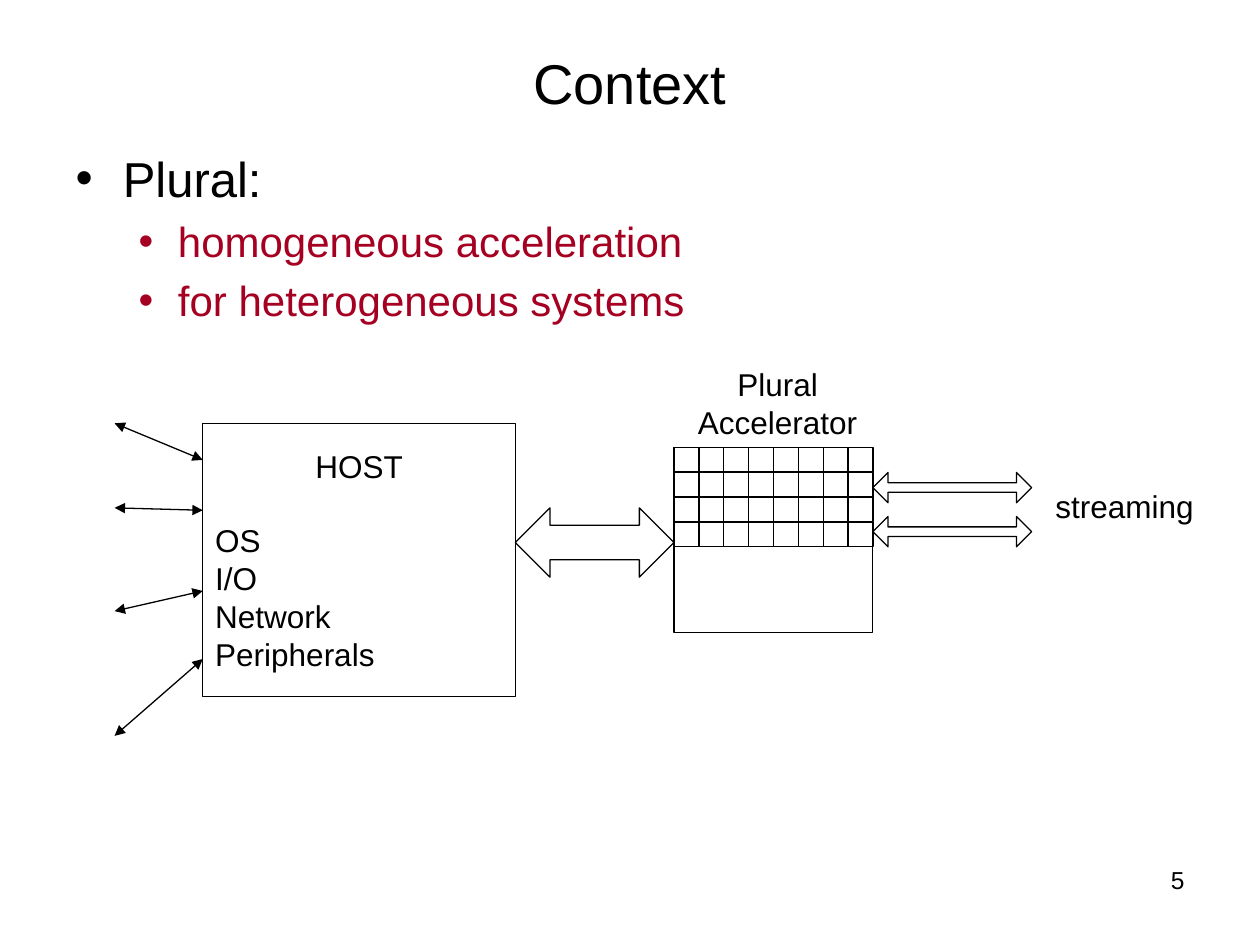
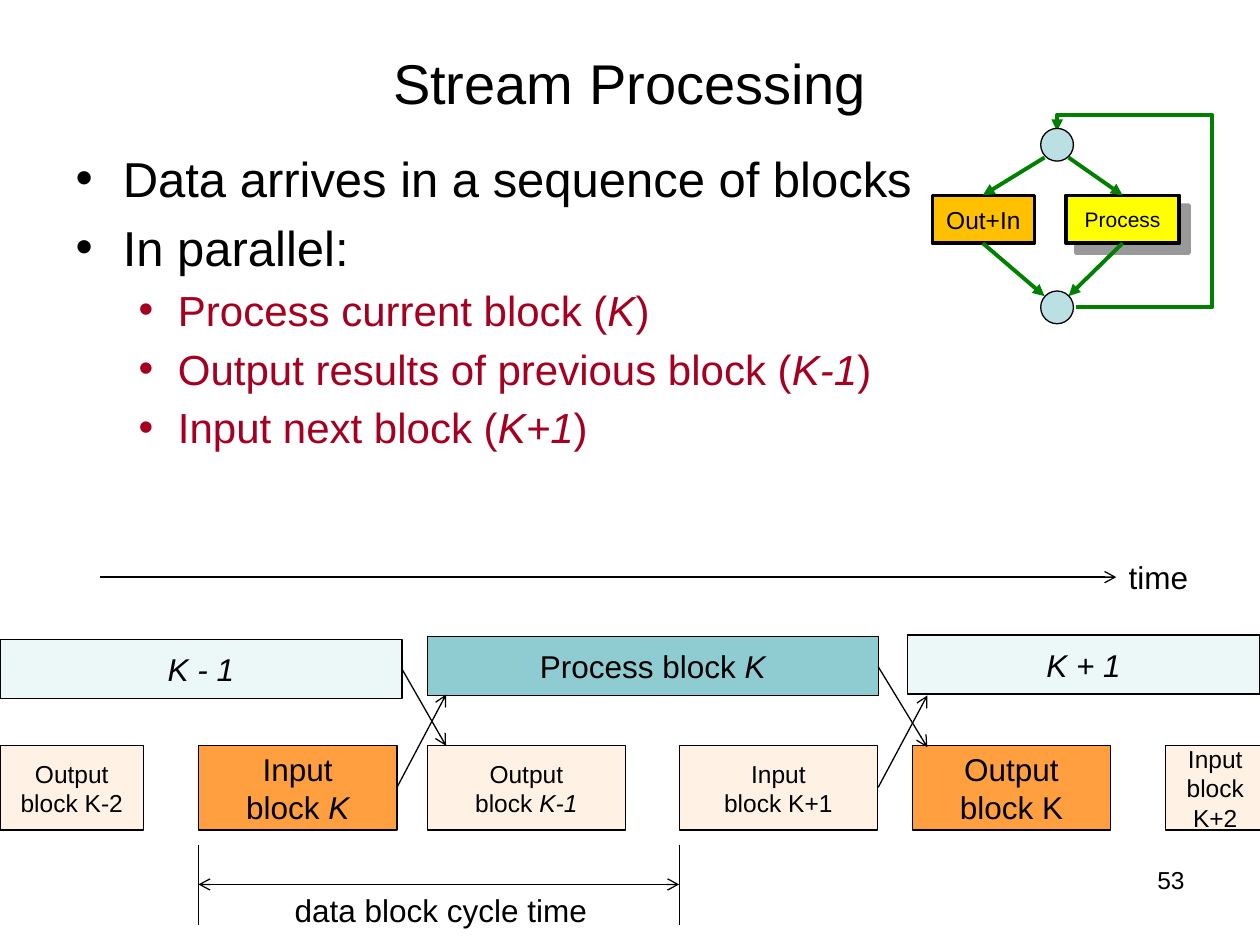
from dataclasses import dataclass
from typing import NamedTuple, Optional

from lxml.etree import SubElement
from pptx import Presentation
from pptx.dml.color import RGBColor as RGB
from pptx.enum.shapes import MSO_CONNECTOR as Link, MSO_SHAPE as Form
from pptx.enum.text import MSO_ANCHOR as Anchor, MSO_AUTO_SIZE as Fit, PP_ALIGN as Align
from pptx.oxml.ns import qn
from pptx.util import Pt

FONT = "Arial"
BLACK = RGB(0x00, 0x00, 0x00)
RED = RGB(0xA5, 0x00, 0x21)
GREEN = RGB(0x00, 0x80, 0x00)
TEAL = RGB(0x8F, 0xCC, 0xD1)
MIST = RGB(0xEC, 0xF7, 0xF8)
CREAM = RGB(0xFF, 0xF2, 0xE5)
ORANGE = RGB(0xFF, 0x9F, 0x3F)
YELLOW = RGB(0xFF, 0xFF, 0x00)
GOLD = RGB(0xFF, 0xC0, 0x00)
ICE = RGB(0xBB, 0xE0, 0xE3)


class Level(NamedTuple):
    size: float
    color: RGB
    left: float
    hang: float


LEVELS = (Level(28, BLACK, 27, 27), Level(24, RED, 58.5, 22.5))


class Wire(NamedTuple):
    x1: float
    y1: float
    x2: float
    y2: float
    head: str = ""
    tail: str = ""
    color: RGB = BLACK
    width: float = 0.75


@dataclass
class Box:
    x: float
    y: float
    w: float
    h: float
    text: str = ""
    size: float = 18
    fill: Optional[RGB] = None
    form: Form = Form.RECTANGLE
    width: float = 0.75
    wrap: bool = True


def write(frame, lines, *, size=18, color=BLACK, align=Align.CENTER,
          anchor=Anchor.MIDDLE, wrap=True, levels=None):
    frame.auto_size = Fit.NONE
    frame.word_wrap = wrap
    frame.vertical_anchor = anchor
    for n, line in enumerate(lines):
        para = frame.add_paragraph() if n else frame.paragraphs[0]
        if levels:
            para.level = levels[n]
            level = LEVELS[levels[n]]
            size, color = level.size, level.color
            props = para._p.get_or_add_pPr()
            props.set("marL", str(Pt(level.left)))
            props.set("indent", str(-Pt(level.hang)))
            SubElement(props, qn("a:buChar")).set("char", "•")
        para.alignment = align
        if n == 0:
            para.space_before = Pt(0)
        for k, piece in enumerate(line.split("*")):
            for row, words in enumerate(piece.split("\n")):
                if row:
                    para.add_line_break()
                if words:
                    run = para.add_run()
                    run.text = words
                    font = run.font
                    font.name, font.size, font.italic = FONT, Pt(size), k % 2 == 1
                    font.color.rgb = color


def place(shape, x: float, y: float, w: float, h: float) -> None:
    shape.left, shape.top, shape.width, shape.height = map(Pt, (x, y, w, h))


def ink(shape, color: RGB, width: float, head: str = "", tail: str = "") -> None:
    shape.line.color.rgb = color
    shape.line.width = Pt(width)
    line = shape.element.spPr.find(qn("a:ln"))
    for tag, kind in (("a:headEnd", head), ("a:tailEnd", tail)):
        if kind:
            SubElement(line, qn(tag)).set("type", kind)


def draw(slide, box: Box):
    shape = slide.shapes.add_shape(box.form, *map(Pt, (box.x, box.y, box.w, box.h)))
    shape.shadow.inherit = False
    if box.fill is None:
        shape.fill.background()
    else:
        shape.fill.solid()
        shape.fill.fore_color.rgb = box.fill
    ink(shape, BLACK, box.width)
    if box.text:
        write(shape.text_frame, [box.text], size=box.size, wrap=box.wrap)
    return shape


def join(slide, wire: Wire) -> None:
    line = slide.shapes.add_connector(Link.STRAIGHT, *map(Pt, wire[:4]))
    ink(line, wire.color, wire.width, wire.head, wire.tail)
    SubElement(line.element.spPr, qn("a:effectLst"))


def label(slide, x: float, y: float, w: float, h: float, text: str, **format) -> None:
    box = slide.shapes.add_textbox(*map(Pt, (x, y, w, h)))
    write(box.text_frame, [text], anchor=Anchor.TOP, **format)


def shade(shape) -> None:
    effects = shape.element.spPr.find(qn("a:effectLst"))
    cast = SubElement(effects, qn("a:outerShdw"), blurRad="0", dist=str(Pt(8)),
                      dir="2700000", algn="tl", rotWithShape="0")
    tone = SubElement(cast, qn("a:srgbClr"), val=str(BLACK))
    SubElement(tone, qn("a:alpha"), val="40000")


def start(deck, title: str, points: list, height: float, page: int):
    slide = deck.slides.add_slide(deck.slide_layouts[1])
    head, body = slide.placeholders
    place(head, 36, 21.6, 648, 50.4)
    write(head.text_frame, [title], size=32)
    place(body, 36, 77.8, 648, height)
    body.text_frame.margin_top = Pt(7)
    write(body.text_frame, [text for _, text in points], align=Align.LEFT,
          anchor=Anchor.TOP, levels=[level for level, _ in points])
    label(slide, 516, 491, 168, 37.5, str(page), size=14, align=Align.RIGHT)
    return slide


def context(deck) -> None:
    slide = start(deck, "Context", [
        (0, "Plural:"),
        (1, "homogeneous acceleration"),
        (1, "for heterogeneous systems"),
    ], 104.4, 5)

    host = draw(slide, Box(115.9, 241.9, 178.6, 156.2))
    write(host.text_frame, ["HOST", "OS", "I/O", "Network", "Peripherals"], wrap=False)
    items = host.text_frame.paragraphs[1:]
    for item in items:
        item.alignment = Align.LEFT
    items[0].space_before = Pt(20.7)

    left, top, cell = 385.2, 255.6, 14.2
    draw(slide, Box(left, top, 8 * cell, 105.8))
    for row in range(4):
        for col in range(8):
            draw(slide, Box(left + col * cell, top + row * cell, cell, cell))
    draw(slide, Box(294.5, 290.2, 90.7, 39.6, form=Form.LEFT_RIGHT_ARROW))
    label(slide, 391, 205.2, 106.6, 51.1, "Plural\nAccelerator", wrap=False)

    for near, far in ((262.8, 241.9), (291.6, 290.2), (337.7, 349.2), (376.6, 420.5)):
        join(slide, Wire(115.9, near, 65.5, far, "triangle", "triangle"))
    for y in (270, 295.2):
        arrow = draw(slide, Box(498.8, y, 90.7, 17.3, form=Form.LEFT_RIGHT_ARROW))
        arrow.adjustments[0] = 0.317
        arrow.adjustments[1] = 0.5
    label(slide, 595.4, 275, 94.3, 28.8, "streaming", wrap=False)


def cycle(slide) -> None:
    shade(draw(slide, Box(609.1, 111.6, 64.8, 27.4, "Process", 12, YELLOW, width=2)))
    route = [(614.9, 175.7), (692.6, 175.7), (692.6, 65.5), (604.1, 65.5), (604.1, 74.9)]
    first, *rest = [(Pt(x), Pt(y)) for x, y in route]
    maker = slide.shapes.build_freeform(*first)
    maker.add_line_segments(rest, close=False)
    loop = maker.convert_to_shape()
    loop.shadow.inherit = False
    loop.fill.background()
    ink(loop, GREEN, 2.25, tail="triangle")
    draw(slide, Box(532.8, 111.6, 58.3, 27.4, "Out+In", 14, GOLD, width=2, wrap=False))
    for inner, outer in ((610.6, 641.5), (596.9, 561.6)):
        for ends in ((inner, 90, outer, 111.6), (outer, 139, inner, 169.2)):
            join(slide, Wire(*ends, tail="triangle", color=GREEN, width=2.25))
    for y in (73.4, 166.3):
        draw(slide, Box(594.7, y, 18.7, 18.7, fill=ICE, form=Form.OVAL))


def stream(deck) -> None:
    slide = start(deck, "Stream Processing", [
        (0, "Data arrives in a sequence of blocks"),
        (0, "In parallel:"),
        (1, "Process current block (*K*)"),
        (1, "Output results of previous block (*K-1*)"),
        (1, "Input next block (*K+1*)"),
    ], 237.6, 53)

    join(slide, Wire(56.9, 329.8, 637.9, 329.8, tail="arrow"))
    label(slide, 637.9, 315.4, 49, 28.8, "time", align=Align.LEFT, wrap=False)

    for x, y, w, text, fill in (
        (244.1, 363.6, 257.8, "Process block *K*", TEAL),
        (518.4, 362.9, 201.6, "*K + 1*", MIST),
        (0, 365.4, 229.7, "*K - 1*", MIST),
    ):
        draw(slide, Box(x, y, w, 33.8, text, fill=fill))
    for x, w, text, size, fill in (
        (244.1, 113.4, "Output\nblock *K-1*", 14, CREAM),
        (388.1, 113.4, "Input\nblock K+1", 14, CREAM),
        (521.3, 113.4, "Output\nblock K", 18, ORANGE),
        (666, 56.9, "Input\nblock K+2", 14, CREAM),
        (0, 82.1, "Output\nblock K-2", 14, CREAM),
        (113.4, 113.4, "Input\nblock *K*", 18, ORANGE),
    ):
        draw(slide, Box(x, 426.2, w, 48.2, text, size, fill))
    for ends in (
        (226.8, 450, 254.9, 396.9),
        (229.7, 382.3, 254.9, 426.2),
        (501.8, 450, 529.9, 397.4),
        (501.8, 380.9, 529.9, 427),
    ):
        join(slide, Wire(*ends, tail="arrow"))

    cycle(slide)

    begin, end = 113.4, 388.1
    for x in (begin, end):
        join(slide, Wire(x, 482.6, x, 528.5))
    join(slide, Wire(begin, 505.4, end, 505.4, "arrow", "arrow"))
    label(slide, 161.3, 505.4, 182.9, 28.8, "data block cycle time",
          align=Align.LEFT, wrap=False)


def main() -> None:
    deck = Presentation()
    deck.slide_width, deck.slide_height = Pt(720), Pt(540)
    context(deck)
    stream(deck)
    deck.save("out.pptx")


if __name__ == "__main__":
    main()
